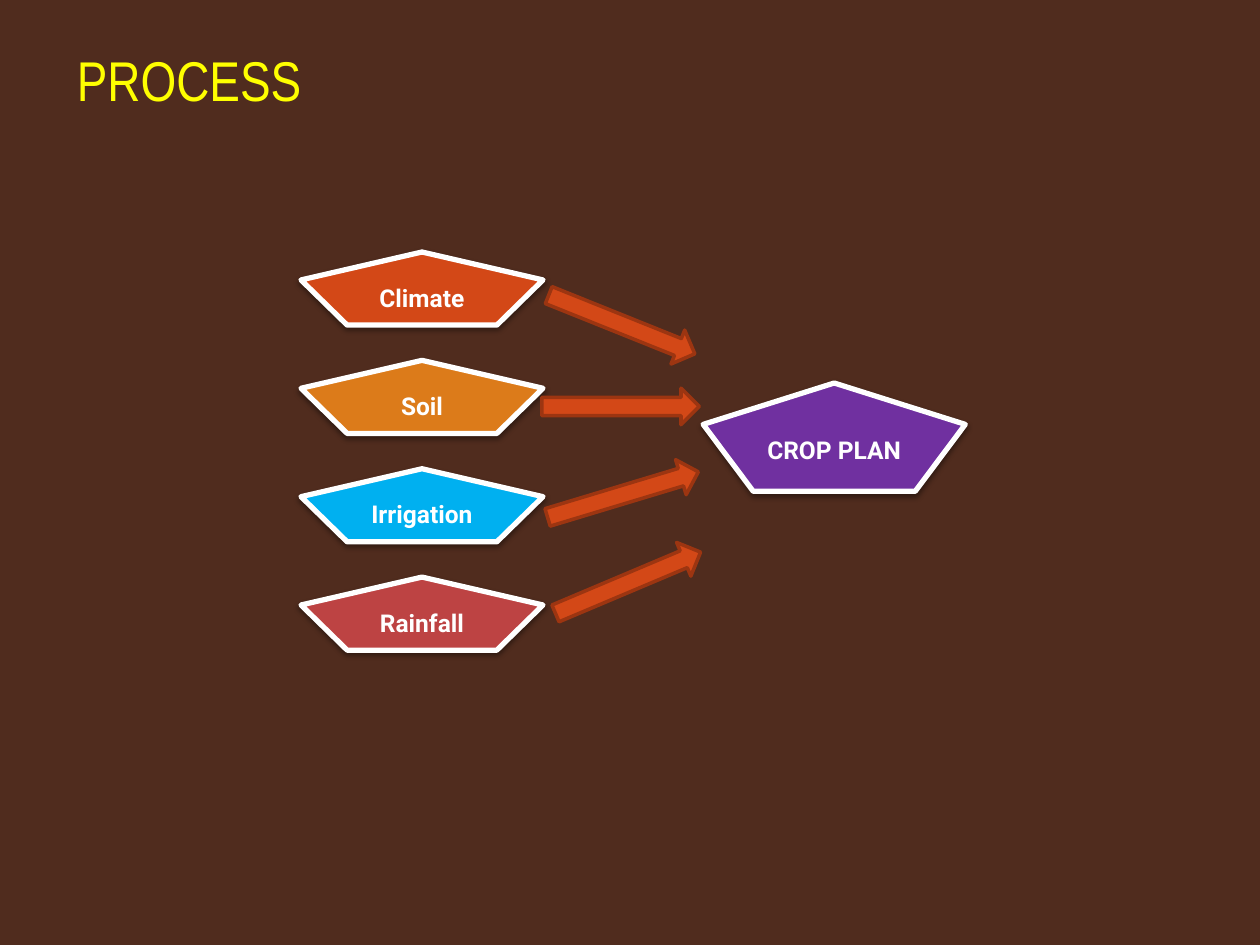
from dataclasses import dataclass

from lxml import etree
from pptx import Presentation
from pptx.dml.color import RGBColor
from pptx.enum import shapes, text
from pptx.oxml import ns
from pptx.util import Pt


@dataclass(frozen=True)
class Theme:
    background: str = "502C1E"
    title: str = "FFFF00"
    title_outline: str = "A37A00"
    label: str = "FFFFFF"
    border: str = "FFFFFF"
    shadow: str = "000000"
    arrow: str = "D34817"
    arrow_border: str = "9C3511"
    climate: str = "D34817"
    soil: str = "DC7B1A"
    irrigation: str = "00B0F0"
    rainfall: str = "BD4343"
    plan: str = "7030A0"
    title_font: str = "Arial Narrow"
    label_font: str = "Roboto"
    title_size: int = 32
    label_size: int = 14


THEME = Theme()
DRAWING = f'xmlns:a="{ns.nsdecls("a").split(chr(34))[1]}"'


def add_filled(kind, left, top, width, height, fill, border, weight):
    """Add a preset shape, placed in points, with a solid fill and border."""
    shape = slide.shapes.add_shape(kind, Pt(left), Pt(top), Pt(width), Pt(height))
    shape.shadow.inherit = False
    shape.fill.solid()
    shape.fill.fore_color.rgb = RGBColor.from_string(fill)
    shape.line.color.rgb = RGBColor.from_string(border)
    shape.line.width = Pt(weight)
    return shape


def format_run(run, font, size, color, bold):
    run.font.name = font
    run.font.size = Pt(size)
    run.font.bold = bold
    run.font.color.rgb = RGBColor.from_string(color)


deck = Presentation()
deck.slide_width, deck.slide_height = Pt(720), Pt(540)
slide = deck.slides.add_slide(deck.slide_layouts[5])
slide.background.fill.solid()
slide.background.fill.fore_color.rgb = RGBColor.from_string(THEME.background)

# Four inputs at an even pitch, then the resulting plan
FACTOR_TOP, FACTOR_PITCH = 144, 61.92
factors = [
    ("Climate", THEME.climate),
    ("Soil", THEME.soil),
    ("Irrigation", THEME.irrigation),
    ("Rainfall", THEME.rainfall),
]
pentagons = [
    (label, fill, 172, FACTOR_TOP + row * FACTOR_PITCH, 138.3, 41.8)
    for row, (label, fill) in enumerate(factors)
]
pentagons.append(("CROP PLAN", THEME.plan, 401.8, 218.9, 149.8, 61.9))

for label, fill, *place in pentagons:
    pentagon = add_filled(
        shapes.MSO_SHAPE.REGULAR_PENTAGON, *place, fill, THEME.border, 3
    )
    effects = pentagon._element.spPr.find(ns.qn("a:effectLst"))
    effects.append(etree.fromstring(
        f'<a:outerShdw {DRAWING} blurRad="{Pt(3.1)}" dist="{Pt(1.6)}" '
        f'dir="5400000" rotWithShape="0"><a:srgbClr val="{THEME.shadow}">'
        '<a:alpha val="38000"/></a:srgbClr></a:outerShdw>'
    ))
    frame = pentagon.text_frame
    frame.text = label
    frame.vertical_anchor = text.MSO_ANCHOR.MIDDLE
    para = frame.paragraphs[0]
    para.alignment = text.PP_ALIGN.CENTER
    format_run(para.runs[0], THEME.label_font, THEME.label_size, THEME.label, True)

# Arrows from each input towards the plan: left, top, rotation
arrows = [(310.3, 175, 21.9), (309.6, 221.8, 0), (311, 272.2, -16.8), (313.9, 322.6, -22.9)]
for left, top, rotation in arrows:
    arrow = add_filled(
        shapes.MSO_SHAPE.RIGHT_ARROW, left, top, 90, 20.9,
        THEME.arrow, THEME.arrow_border, 2,
    )
    arrow.rotation = rotation

title = slide.shapes.title
title.left, title.top, title.width, title.height = Pt(36.7), Pt(0), Pt(648), Pt(90)
title.text_frame.text = "PROCESS"
title.text_frame.vertical_anchor = text.MSO_ANCHOR.MIDDLE
para = title.text_frame.paragraphs[0]
para.alignment = text.PP_ALIGN.LEFT
run = para.runs[0]
format_run(run, THEME.title_font, THEME.title_size, THEME.title, False)
run.font._element.insert(0, etree.fromstring(
    f'<a:ln {DRAWING} w="{Pt(0.75)}"><a:solidFill>'
    f'<a:srgbClr val="{THEME.title_outline}"/></a:solidFill></a:ln>'
))

deck.save("out.pptx")
